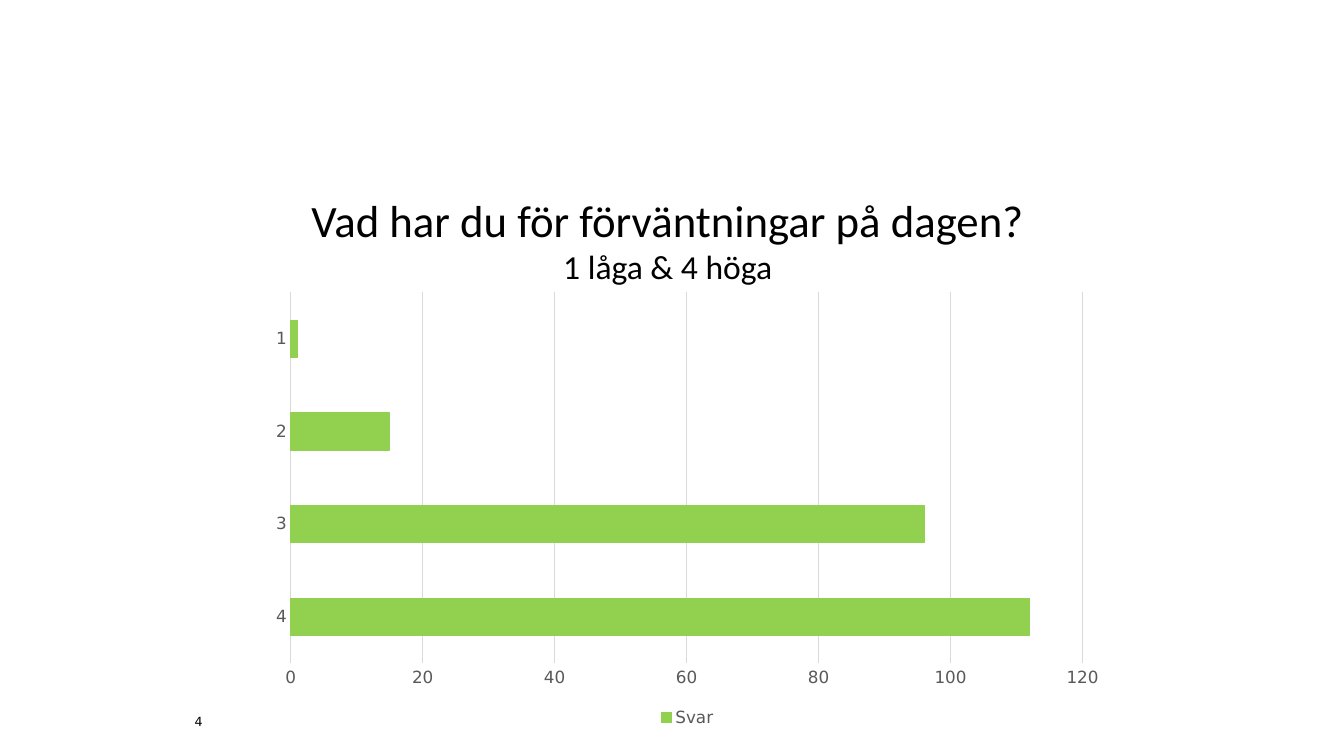
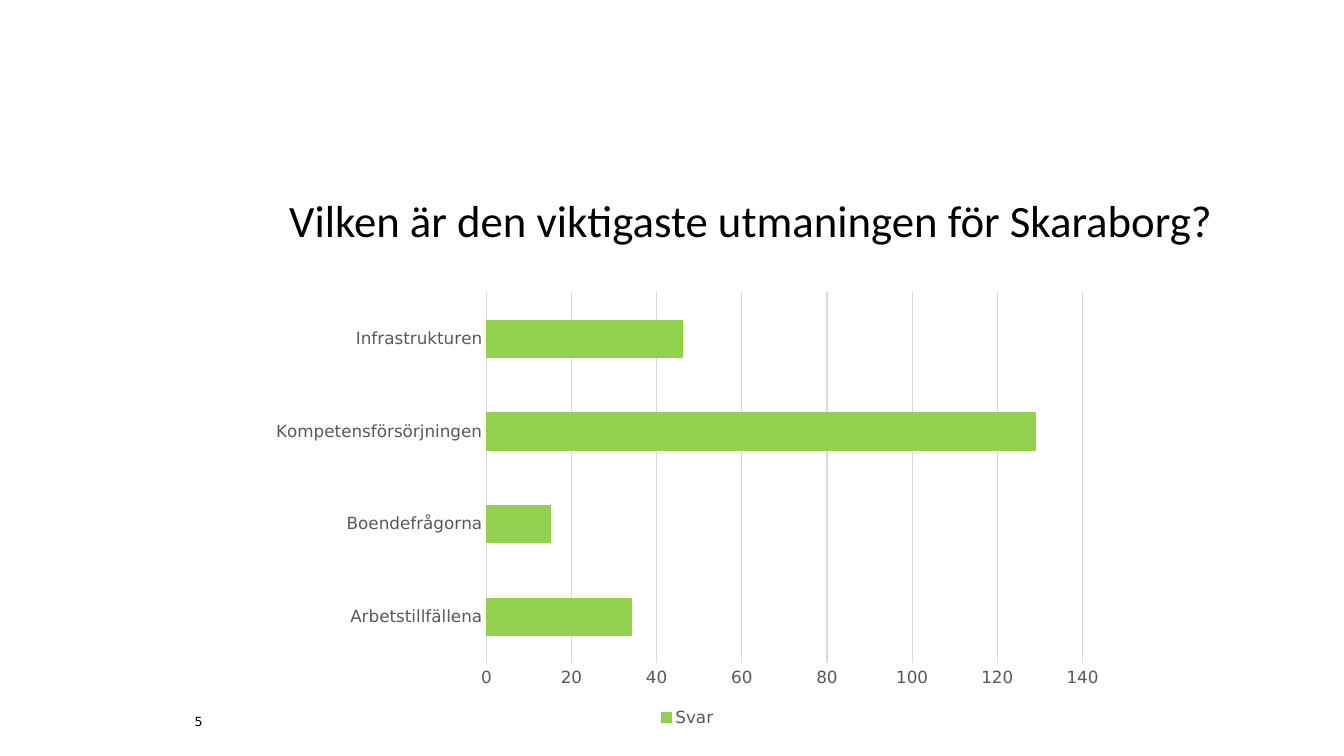
from pptx import Presentation
from pptx.chart.data import CategoryChartData
from pptx.dml.color import RGBColor
from pptx.enum.chart import XL_CHART_TYPE, XL_LEGEND_POSITION, XL_TICK_MARK
from pptx.enum.text import MSO_ANCHOR, PP_ALIGN
from pptx.util import Pt

STACKED_BARS = XL_CHART_TYPE.BAR_STACKED
LEGEND_BOTTOM = XL_LEGEND_POSITION.BOTTOM
NO_TICK = XL_TICK_MARK.NONE
TOP = MSO_ANCHOR.TOP
CENTER = PP_ALIGN.CENTER
LEFT = PP_ALIGN.LEFT


def color(hex_value):
    return RGBColor.from_string(hex_value)


def apply(target, values):
    for attribute, value in values.items():
        setattr(target, attribute, value)


class Deck:
    TEXT = "000000"
    LABEL = "595959"
    GRID = "D9D9D9"
    BAR = "92D050"
    TITLE_FONT = "Calibri"
    BODY_FONT = "DejaVu Sans"
    CONTENT_LEFT = 185

    def __init__(self):
        self.presentation = Presentation()
        apply(self.presentation, {"slide_width": Pt(960), "slide_height": Pt(540)})
        self.slide = None

    def new_slide(self):
        blank = self.presentation.slide_layouts[6]
        self.slide = self.presentation.slides.add_slide(blank)

    def style_font(self, font, name, size, hex_value):
        apply(font, {"name": name, "size": Pt(size)})
        font.color.rgb = color(hex_value)

    def text(self, box, lines, font_name, align, frame_format):
        frame = self.slide.shapes.add_textbox(*map(Pt, box)).text_frame
        apply(frame, {"word_wrap": True, "vertical_anchor": TOP, **frame_format})
        for index, (words, size) in enumerate(lines):
            paragraph = frame.add_paragraph() if index else frame.paragraphs[0]
            paragraph.alignment = align
            run = paragraph.add_run()
            run.text = words
            self.style_font(run.font, font_name, size, self.TEXT)

    def title(self, width, question, scale=None):
        lines = [(question, 32)]
        if scale:
            lines.append((scale, 24))
        box = (self.CONTENT_LEFT, 134, width, 75)
        self.text(box, lines, self.TITLE_FONT, CENTER, {})

    def page_number(self, number):
        insets = {f"margin_{side}": 0 for side in ("left", "top", "right", "bottom")}
        self.text((139, 510, 77, 21), [(str(number), 9)], self.BODY_FONT, LEFT, insets)

    def style_axis(self, axis):
        apply(axis, {"major_tick_mark": NO_TICK, "minor_tick_mark": NO_TICK})
        axis.format.line.fill.background()
        self.style_font(axis.tick_labels.font, self.BODY_FONT, 12, self.LABEL)

    def style_line(self, line, hex_value):
        line.color.rgb = color(hex_value)
        line.width = Pt(0.75)

    def answer_chart(self, answers):
        data = CategoryChartData()
        data.categories = list(answers)
        data.add_series("Svar", list(answers.values()))
        box = map(Pt, (self.CONTENT_LEFT, 202.5, 612, 320))
        chart = self.slide.shapes.add_chart(STACKED_BARS, *box, data).chart
        apply(chart, {"has_title": False, "has_legend": True})
        self.style_font(chart.font, self.BODY_FONT, 10, self.TEXT)
        apply(chart.legend, {"position": LEGEND_BOTTOM, "include_in_layout": False})
        self.style_font(chart.legend.font, self.BODY_FONT, 12, self.LABEL)

        for axis in (chart.category_axis, chart.value_axis):
            self.style_axis(axis)
        chart.value_axis.has_major_gridlines = True
        self.style_line(chart.value_axis.major_gridlines.format.line, self.GRID)

        plot = chart.plots[0]
        apply(plot, {"gap_width": 150, "overlap": 100, "vary_by_categories": False})
        bars = plot.series[0].format
        bars.fill.solid()
        bars.fill.fore_color.rgb = color(self.BAR)
        self.style_line(bars.line, self.BAR)

    def question_slide(self, number, title, answers):
        self.new_slide()
        self.title(*title)
        self.answer_chart(answers)
        self.page_number(number)


QUESTIONS = [
    (
        (584, "Vad har du för förväntningar på dagen?", "1 låga & 4 höga"),
        {"4": 112, "3": 96, "2": 15, "1": 1},
    ),
    (
        (703, "Vilken är den viktigaste utmaningen för Skaraborg?"),
        {
            "Arbetstillfällena": 34,
            "Boendefrågorna": 15,
            "Kompetensförsörjningen": 129,
            "Infrastrukturen": 46,
        },
    ),
]


def main():
    deck = Deck()
    for number, (title, answers) in enumerate(QUESTIONS, start=4):
        deck.question_slide(number, title, answers)
    deck.presentation.save("out.pptx")


if __name__ == "__main__":
    main()
